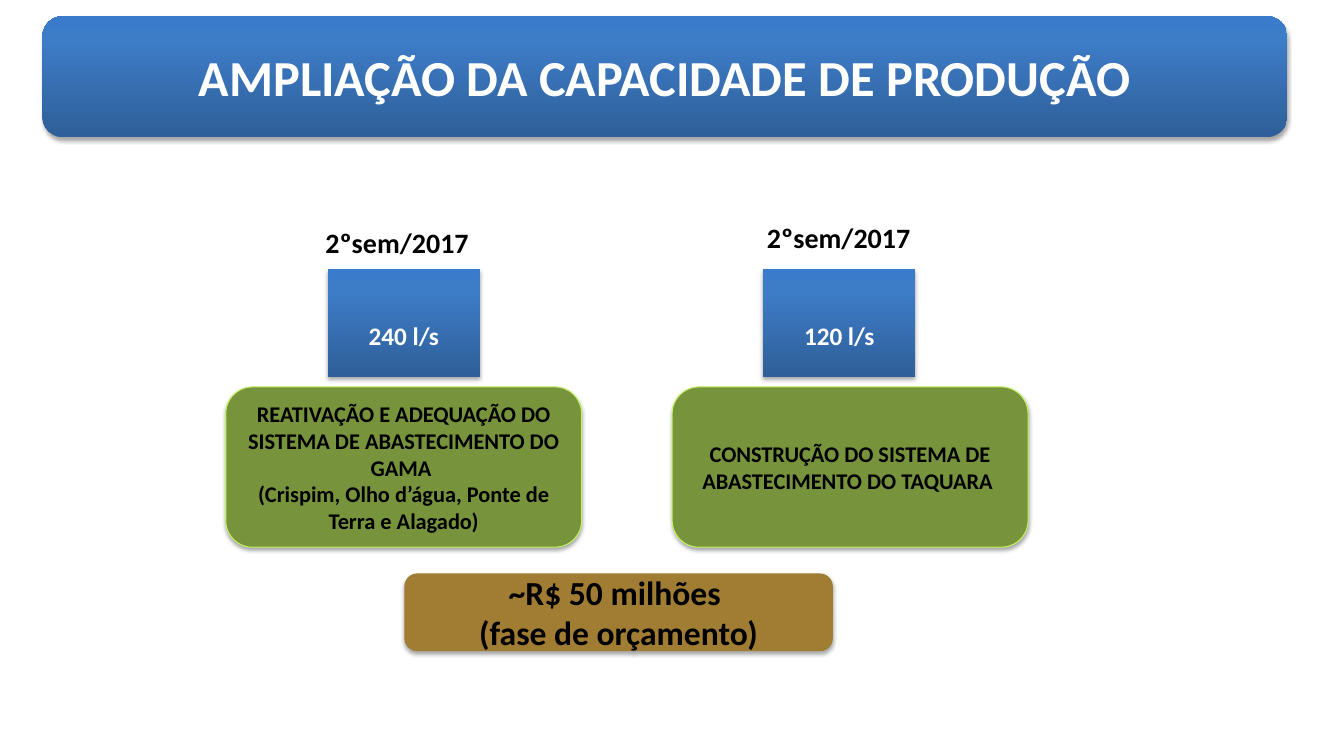
from copy import deepcopy
from lxml.etree import SubElement as Sub
from pptx import Presentation
from pptx.dml.color import RGBColor as Rgb
from pptx.enum.shapes import MSO_SHAPE as Kind
from pptx.enum.text import MSO_ANCHOR as Anchor, MSO_AUTO_SIZE as Fit, PP_ALIGN as Align
from pptx.oxml.ns import qn
from pptx.util import Cm, Pt

TITLE = "AMPLIAÇÃO DA CAPACIDADE DE PRODUÇÃO"
WORKS = [
    {"date": "2ºsem/2017", "flow": "240 l/s",
     "name": ["REATIVAÇÃO E ADEQUAÇÃO DO SISTEMA DE ABASTECIMENTO DO GAMA ",
              "(Crispim, Olho d’água, Ponte de Terra e Alagado)"],
     "left": {"name": 5.69, "flow": 8.26, "date": 7.95}, "rise": 5.56},
    {"date": "2ºsem/2017", "flow": "120 l/s",
     "name": ["CONSTRUÇÃO DO SISTEMA DE ABASTECIMENTO DO TAQUARA "],
     "left": {"name": 16.94, "flow": 19.23, "date": 19.08}, "rise": 5.44},
]
COST = ["~R$ 50 milhões ", "(fase de orçamento)"]

THEME = {
    "font": "Calibri",
    "blue": [(0, "2F5F99"), (0.8, "3D7CC7"), (1, "3A7CCB")],
    "green": "77933C", "lime": "C3F263", "gold": "A07D32",
    "dark": "000000", "light": "FFFFFF",
    "title": 36, "cost": 24, "date": 20, "flow": 18, "name": 16,
}

deck = Presentation()
deck.slide_width, deck.slide_height = Cm(33.87), Cm(19.05)
slide = deck.slides.add_slide(deck.slide_layouts[6])


def write(frame, lines, size, color="dark", align=Align.CENTER):
    for i, line in enumerate(lines):
        para = frame.paragraphs[0] if i == 0 else frame.add_paragraph()
        para.alignment = align
        run = para.add_run()
        run.text = line
        font = run.font
        font.name, font.size, font.bold = THEME["font"], Pt(THEME[size]), True
        font.color.rgb = Rgb.from_string(THEME[color])


def shade(shape):
    shape.shadow.inherit = False
    group = shape._element.spPr.find(qn("a:effectLst"))
    drop = Sub(group, qn("a:outerShdw"), blurRad="40000", dist="23000",
               dir="5400000", rotWithShape="0")
    black = Sub(drop, qn("a:srgbClr"), val=THEME["dark"])
    Sub(black, qn("a:alpha"), val="35000")


def paint(shape, color):
    fill = shape.fill
    if isinstance(color, str):
        fill.solid()
        fill.fore_color.rgb = Rgb.from_string(color)
        return
    fill.gradient()
    fill.gradient_angle = 90
    stops = shape._element.spPr.find(".//" + qn("a:gsLst"))
    stops.append(deepcopy(stops[-1]))
    for stop, (place, tint) in zip(fill.gradient_stops, color):
        stop.position = place
        stop.color.rgb = Rgb.from_string(tint)


def block(kind, box, color, lines, size, ink="dark", edge=None, drop=0.13):
    shape = slide.shapes.add_shape(kind, *map(Cm, box))
    paint(shape, THEME[color])
    if edge:
        shape.line.color.rgb = Rgb.from_string(THEME[edge])
        shape.line.width = Pt(0.75)
    else:
        shape.line.fill.background()
    shade(shape)
    frame = shape.text_frame
    frame.word_wrap = True
    frame.vertical_anchor = Anchor.MIDDLE
    frame.margin_top = Cm(drop)
    write(frame, lines, size, ink)


def label(box, text):
    frame = slide.shapes.add_textbox(*map(Cm, box)).text_frame
    frame.word_wrap = False
    frame.auto_size = Fit.SHAPE_TO_FIT_TEXT
    write(frame, [text], "date", align=Align.LEFT)


ROUND, RECT = Kind.ROUNDED_RECTANGLE, Kind.RECTANGLE
block(ROUND, (1.07, 0.41, 31.37, 3.05), "blue", [TITLE], "title", "light")
for work in WORKS:
    left = work["left"]
    block(ROUND, (left["name"], 9.75, 8.97, 4.04), "green", work["name"], "name", edge="lime")
    block(RECT, (left["flow"], 6.78, 3.84, 2.72), "blue", [work["flow"]], "flow", "light", drop=0.73)
    label((left["date"], work["rise"], 4.17, 1.12), work["date"])
block(ROUND, (10.19, 14.45, 10.8, 1.96), "gold", COST, "cost")

deck.save("out.pptx")
